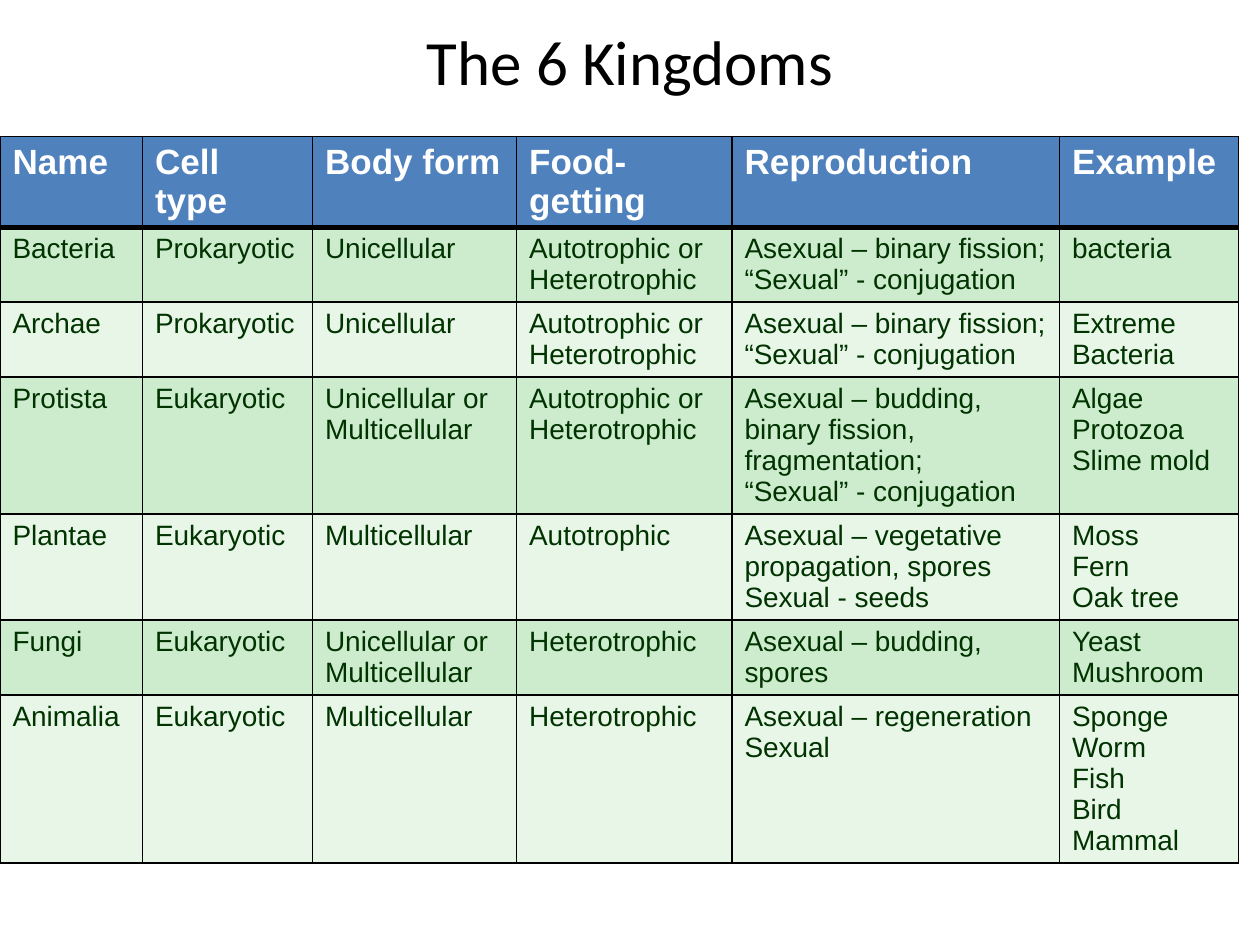
from lxml import etree
from pptx import Presentation
from pptx.dml.color import RGBColor
from pptx.enum.text import MSO_ANCHOR, MSO_AUTO_SIZE, PP_ALIGN
from pptx.oxml.ns import qn
from pptx.util import Pt

CENTER, LEFT = PP_ALIGN.CENTER, PP_ALIGN.LEFT
MIDDLE, TOP = MSO_ANCHOR.MIDDLE, MSO_ANCHOR.TOP
NO_AUTOFIT = MSO_AUTO_SIZE.NONE

BLACK = RGBColor(0x00, 0x00, 0x00)
WHITE = RGBColor(0xFF, 0xFF, 0xFF)
BLUE = RGBColor(0x4F, 0x81, 0xBD)
DARK_GREEN = RGBColor(0x00, 0x33, 0x00)
BANDS = (RGBColor(0xCD, 0xEC, 0xCD), RGBColor(0xE8, 0xF6, 0xE8))

# Table content: a line break starts a new paragraph
COLUMN_WIDTHS = (81.4, 97.2, 116.6, 123.1, 187.2, 102.2)
HEADERS = ("Name", "Cell type", "Body form", "Food-getting", "Reproduction", "Example")
BOTH_FORMS = "Unicellular or Multicellular"
BOTH_FOODS = "Autotrophic or Heterotrophic"
FISSION = "Asexual – binary fission; “Sexual” - conjugation"
KINGDOMS = (
    ("Bacteria", "Prokaryotic", "Unicellular", BOTH_FOODS, FISSION, "bacteria"),
    ("Archae", "Prokaryotic", "Unicellular", BOTH_FOODS, FISSION, "Extreme\nBacteria"),
    ("Protista", "Eukaryotic", BOTH_FORMS, BOTH_FOODS,
     "Asexual – budding, binary fission, fragmentation;\n“Sexual” - conjugation",
     "Algae\nProtozoa\nSlime mold"),
    ("Plantae", "Eukaryotic", "Multicellular", "Autotrophic",
     "Asexual – vegetative propagation, spores\nSexual - seeds",
     "Moss\nFern\nOak tree"),
    ("Fungi", "Eukaryotic", BOTH_FORMS, "Heterotrophic",
     "Asexual – budding, spores", "Yeast\nMushroom"),
    ("Animalia", "Eukaryotic", "Multicellular", "Heterotrophic",
     "Asexual – regeneration\nSexual", "Sponge\nWorm\nFish\nBird\nMammal"),
)


def write_text(tf, text, *, size, color, font="Arial", bold=False, align=LEFT):
    for i, line in enumerate(text.split("\n")):
        p = tf.add_paragraph() if i else tf.paragraphs[0]
        p.alignment = align
        r = p.add_run()
        r.text = line
        r.font.name, r.font.size, r.font.bold = font, Pt(size), bold
        r.font.color.rgb = color


def set_borders(cell, **widths):
    tc_pr = cell._tc.get_or_add_tcPr()
    for side in "LRTB":
        ln = etree.SubElement(tc_pr, qn(f"a:ln{side}"), w=str(Pt(widths.get(side, 1))))
        fill = etree.SubElement(ln, qn("a:solidFill"))
        etree.SubElement(fill, qn("a:srgbClr"), val=str(BLACK))


class KingdomSlide:
    def __init__(self, prs):
        self.s = prs.slides.add_slide(prs.slide_layouts[5])
        self.header = dict(size=20, color=WHITE, bold=True)
        self.body = dict(size=16, color=DARK_GREEN)

    def title(self, text, left, top, width, height):
        sp = self.s.shapes.title
        sp.left, sp.top, sp.width, sp.height = map(Pt, (left, top, width, height))
        tf = sp.text_frame
        tf.auto_size, tf.vertical_anchor = NO_AUTOFIT, MIDDLE
        write_text(tf, text, size=36, color=BLACK, font="Calibri", align=CENTER)

    def table(self, rows, widths, left, top, row_height):
        frame = self.s.shapes.add_table(
            len(rows), len(widths), Pt(left), Pt(top),
            Pt(sum(widths)), Pt(row_height * len(rows)))
        table = frame.table
        table.horz_banding = False
        for column, width in zip(table.columns, widths):
            column.width = Pt(width)
        for i, row in enumerate(rows):
            for j, text in enumerate(row):
                self.cell(table.cell(i, j), text, i)

    def cell(self, cell, text, row):
        # A thick rule separates the header from the body
        set_borders(cell, **{0: {"B": 3}, 1: {"T": 3}}.get(row, {}))
        cell.fill.solid()
        cell.fill.fore_color.rgb = BANDS[(row - 1) % 2] if row else BLUE
        cell.vertical_anchor = TOP
        write_text(cell.text_frame, text, **(self.body if row else self.header))


def main():
    prs = Presentation()
    prs.slide_width, prs.slide_height = Pt(720), Pt(540)
    slide = KingdomSlide(prs)
    slide.title("The 6 Kingdoms", 36, 21.6, 648, 25.2)
    # Rows grow to fit their text
    slide.table((HEADERS, *KINGDOMS), COLUMN_WIDTHS, 0, 78, 34)
    prs.save("out.pptx")


if __name__ == "__main__":
    main()
